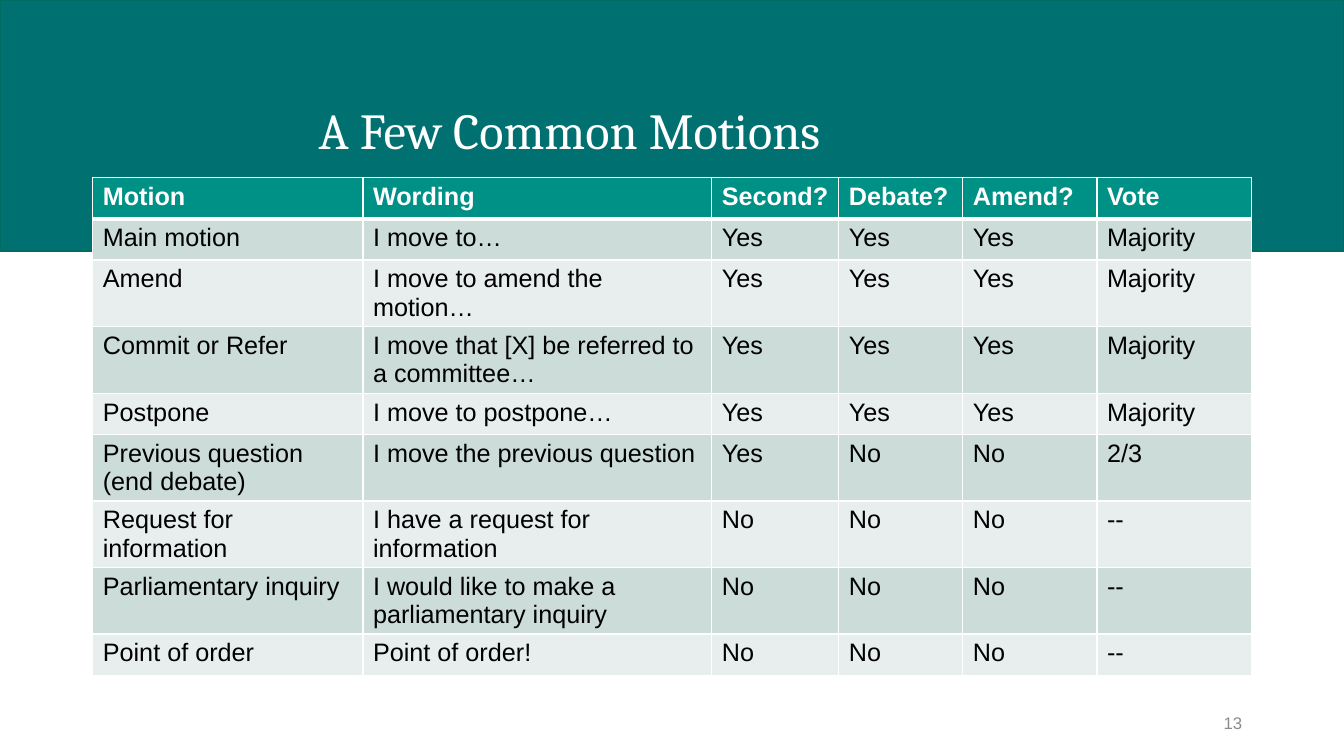
from pptx import Presentation
from pptx.dml.color import RGBColor
from pptx.enum.shapes import MSO_SHAPE as Shape
from pptx.enum.text import MSO_ANCHOR as Anchor, PP_ALIGN as Align
from pptx.oxml import parse_xml
from pptx.oxml.ns import nsdecls
from pptx.util import Inches, Pt

HEADERS = ["Motion", "Wording", "Second?", "Debate?", "Amend?", "Vote"]
MOTIONS = [
    ["Main motion", "I move to…", "Yes", "Yes", "Yes", "Majority"],
    ["Amend", "I move to amend the motion…", "Yes", "Yes", "Yes", "Majority"],
    ["Commit or Refer", "I move that [X] be referred to a committee…", "Yes", "Yes", "Yes", "Majority"],
    ["Postpone", "I move to postpone…", "Yes", "Yes", "Yes", "Majority"],
    ["Previous question (end debate)", "I move the previous question", "Yes", "No", "No", "2/3"],
    ["Request for information", "I have a request for information", "No", "No", "No", "--"],
    ["Parliamentary inquiry", "I would like to make a parliamentary inquiry", "No", "No", "No", "--"],
    ["Point of order", "Point of order!", "No", "No", "No", "--"],
]
COLUMN_WIDTHS = [2.68, 3.46, 1.26, 1.23, 1.33, 1.53]
ROW_HEIGHT = 0.41


def color(hex_string):
    return RGBColor.from_string(hex_string)


class MotionsSlide:
    """Holds the slide and its style, and adds each kind of element."""

    WHITE, BLACK, GRAY = "FFFFFF", "000000", "8C8C8C"
    BAND, BAND_LINE, HEADER = "007071", "006B63", "009186"
    ROW_FILLS = ["CCDCD9", "E7EEED"]
    TITLE_FONT, BODY_FONT = "Cambria", "Arial"

    def __init__(self, presentation):
        self.slide = presentation.slides.add_slide(presentation.slide_layouts[5])

    def style(self, paragraph, size, hex_string, name=BODY_FONT, bold=False):
        font = paragraph.font
        font.name, font.size, font.bold = name, Pt(size), bold
        font.color.rgb = color(hex_string)

    def add_title(self, text, left, top, width, height):
        title = self.slide.shapes.title
        title.left, title.top = Inches(left), Inches(top)
        title.width, title.height = Inches(width), Inches(height)
        title.text_frame.text = text
        title.text_frame.vertical_anchor = Anchor.MIDDLE
        paragraph = title.text_frame.paragraphs[0]
        paragraph.alignment = Align.LEFT
        paragraph.line_spacing = 0.9
        self.style(paragraph, 36, self.WHITE, self.TITLE_FONT)

    def add_band(self, width, height):
        band = self.slide.shapes.add_shape(Shape.RECTANGLE, 0, 0, Inches(width), Inches(height))
        band.shadow.inherit = False
        band.fill.solid()
        band.fill.fore_color.rgb = color(self.BAND)
        band.line.color.rgb = color(self.BAND_LINE)
        band.line.width = Pt(1)
        self.slide.shapes.title.element.addprevious(band.element)

    def add_borders(self, cell, **widths):
        properties = cell._tc.get_or_add_tcPr()
        for side in "LRTB":
            properties.append(parse_xml(
                f'<a:ln{side} {nsdecls("a")} w="{Pt(widths.get(side, 1))}"><a:solidFill>'
                f'<a:srgbClr val="{self.WHITE}"/></a:solidFill></a:ln{side}>'))

    def fill_cell(self, cell, text, row):
        is_header = row == 0
        widths = {0: {"B": 3}, 1: {"T": 3}}.get(row, {})
        self.add_borders(cell, **widths)
        cell.fill.solid()
        cell.fill.fore_color.rgb = color(self.HEADER if is_header else self.ROW_FILLS[(row - 1) % 2])
        cell.text = text
        self.style(cell.text_frame.paragraphs[0], 18,
                   self.WHITE if is_header else self.BLACK, bold=is_header)

    def add_table(self, rows, left, top):
        table = self.slide.shapes.add_table(
            len(rows), len(COLUMN_WIDTHS), Inches(left), Inches(top),
            Inches(sum(COLUMN_WIDTHS)), Inches(ROW_HEIGHT * len(rows))).table
        for column, width in zip(table.columns, COLUMN_WIDTHS):
            column.width = Inches(width)
        for row, texts in enumerate(rows):
            for column, text in enumerate(texts):
                self.fill_cell(table.cell(row, column), text, row)

    def add_page_number(self, text, left, top, width, height):
        box = self.slide.shapes.add_textbox(Inches(left), Inches(top), Inches(width), Inches(height))
        box.text_frame.word_wrap = True
        box.text_frame.vertical_anchor = Anchor.MIDDLE
        paragraph = box.text_frame.paragraphs[0]
        paragraph.text = text
        paragraph.alignment = Align.RIGHT
        self.style(paragraph, 12, self.GRAY)


def main():
    presentation = Presentation()
    presentation.slide_width, presentation.slide_height = Inches(13.33), Inches(7.5)
    motions = MotionsSlide(presentation)
    motions.add_band(13.33, 2.49)
    motions.add_title("A Few Common Motions", 3.06, 0.4, 9.36, 1.84)
    motions.add_table([HEADERS, *MOTIONS], 0.92, 1.76)
    motions.add_page_number("13", 9.42, 6.99, 3, 0.36)
    presentation.save("out.pptx")


if __name__ == "__main__":
    main()
